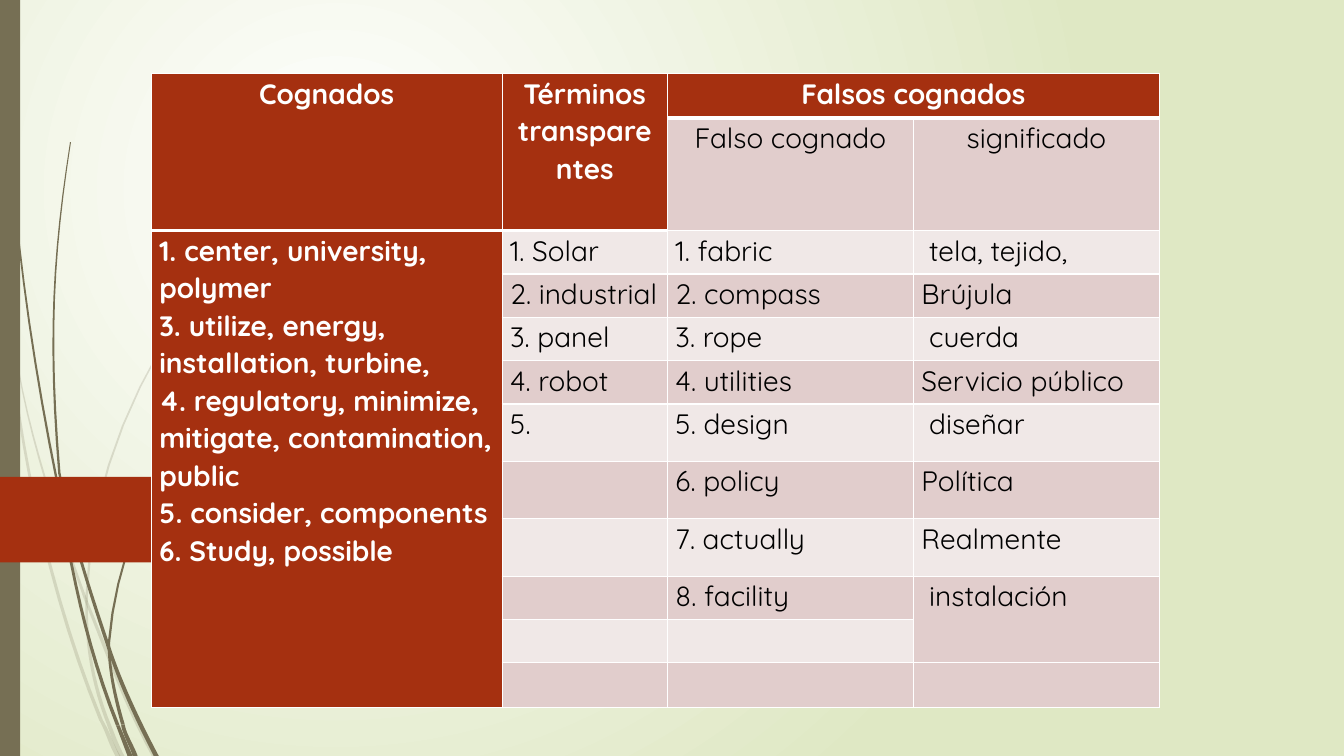
import pptx
import pptx.dml.color
import pptx.enum.shapes
import pptx.enum.text
import pptx.oxml
import pptx.oxml.ns
import pptx.util

Inches = pptx.util.Inches

HEADERS = [
    ("Cognados", "Términos transparentes", "Falsos cognados", ""),
    ("", "", "Falso cognado", "significado"),
]
COGNATES = "\n".join([
    "1. center, university, polymer",
    "3. utilize, energy, installation, turbine,",
    "4. regulatory, minimize, mitigate, contamination, public",
    "5. consider, components",
    "6. Study, possible",
])
TERMS = [
    (COGNATES, "1. Solar", "1. fabric", " tela, tejido,"),
    ("", "2. industrial", "2. compass", "Brújula"),
    ("", "3. panel", "3. rope", " cuerda"),
    ("", "4. robot", "4. utilities", "Servicio público"),
    ("", "5.", "5. design", " diseñar"),
    ("", "", "6. policy", "Política"),
    ("", "", "7. actually", "Realmente"),
    ("", "", "8. facility", " instalación"),
    ("", "", "", ""),
    ("", "", "", ""),
]
COLUMN_WIDTHS = [3.48, 1.64, 2.44, 2.44]
ROW_HEIGHTS = [0.44, 0.46] + [0.43] * 4 + [0.57] * 3 + [0.43, 0.43, 0.44]
# First and last (row, column) of each merged block
MERGES = [((0, 0), (1, 0)), ((0, 1), (1, 1)), ((0, 2), (0, 3)),
          ((2, 0), (11, 0)), ((9, 3), (10, 3))]

# Points each grass stem passes through, tip to root; every third one is a joint
PALE_STEMS = {
    "left": [(0, 2.9), (0.04, 3.1), (0.07, 3.3), (0.11, 3.5), (0.29, 4.7),
             (0.59, 5.95), (1, 7.14), (1.06, 7.26), (1.11, 7.38), (1.17, 7.5)],
    "middle": [(0.15, 3.45), (0.33, 4.33), (0.59, 5.2), (0.85, 5.95),
               (1.07, 6.5), (1.28, 7), (1.53, 7.5)],
    "right": [(3.12, 1.53), (2.04, 2.78), (1.22, 4.22), (0.86, 5.9), (0.87, 6.3),
              (0.93, 6.7), (1.05, 7.11), (1.1, 7.24), (1.15, 7.37), (1.21, 7.5)],
}
DARK_STEMS = {
    "left": [(0.04, 0), (0.11, 1.6), (0.29, 3.2), (0.57, 4.8), (0.71, 5.6),
             (0.9, 6.4), (1.17, 7.2), (1.21, 7.3), (1.25, 7.4), (1.29, 7.5)],
    "middle": [(0.7, 1.41), (0.57, 2.45), (0.53, 3.49), (0.59, 4.7), (0.73, 5.3),
               (0.9, 5.88), (1.08, 6.43), (1.21, 6.78), (1.37, 7.14), (1.55, 7.5)],
    "right": [(2.6, 3.44), (1.87, 4.3), (1.34, 5.26), (1.08, 6.38), (1.1, 6.65),
              (1.15, 6.92), (1.22, 7.19), (1.25, 7.29), (1.3, 7.4), (1.34, 7.5)],
}
TIP_WIDTH, ROOT_WIDTH = 0.01, 0.05
CURVE_STEPS = 12

THEME = {
    "white": "FFFFFF", "black": "000000", "meadow": "DFE8C4",
    "grass": "766F54", "brick": "A53010",
    "band": ("F0E8E7", "E1CDCC"),
    "font": "Quicksand", "size": 20, "pale_opacity": 20,
}


def rgb(code):
    return pptx.dml.color.RGBColor.from_string(code)


def paint(shape, color, opacity=100):
    shape.shadow.inherit = False
    shape.fill.solid()
    shape.fill.fore_color.rgb = rgb(color)
    shape.line.fill.background()
    if opacity < 100:
        color_xml = shape.element.spPr.find(".//" + pptx.oxml.ns.qn("a:srgbClr"))
        color_xml.append(pptx.oxml.parse_xml(
            f'<a:alpha {pptx.oxml.ns.nsdecls("a")} val="{opacity * 1000}"/>'))


def draw_outline(slide, points, color, opacity=100):
    corners = [(Inches(x), Inches(y)) for x, y in points]
    builder = slide.shapes.build_freeform(*corners[0])
    builder.add_line_segments(corners[1:], close=True)
    paint(builder.convert_to_shape(), color, opacity)


def curve_point(waypoints, t):
    """Point at t (0 to 1) on the cubic that meets the four waypoints at equal steps."""
    s = 3 * t
    weights = ((1 - s) * (2 - s) * (3 - s) / 6, s * (2 - s) * (3 - s) / 2,
               s * (s - 1) * (3 - s) / 2, s * (s - 1) * (s - 2) / 6)
    return tuple(sum(weight * point[axis] for weight, point in zip(weights, waypoints))
                 for axis in (0, 1))


def draw_stem(slide, waypoints, opacity):
    """Draw one blade between each pair of joints, widening from tip to root."""
    last = len(waypoints) - 1
    for joint in range(0, last, 3):
        left_side, right_side = [], []
        for step in range(CURVE_STEPS + 1):
            t = step / CURVE_STEPS
            x, y = curve_point(waypoints[joint:joint + 4], t)
            grown = (joint + 3 * t) / last
            half = (TIP_WIDTH + (ROOT_WIDTH - TIP_WIDTH) * grown) / 2
            left_side.append((x - half, y))
            right_side.append((x + half, y))
        draw_outline(slide, left_side + right_side[::-1], THEME["grass"], opacity)


def draw_page_marker(slide):
    top, bottom, shoulder, tip = 4.73, 5.58, 1.5, 1.91
    draw_outline(slide, [(0, top), (shoulder, top), (tip, (top + bottom) / 2),
                         (shoulder, bottom), (0, bottom)], THEME["brick"])


def set_background(slide):
    fill = slide.background.fill
    fill.gradient()
    for stop, color in zip(fill.gradient_stops, ("white", "meadow")):
        stop.color.rgb = rgb(THEME[color])
    gradient = slide.element.find(".//" + pptx.oxml.ns.qn("a:gradFill"))
    gradient.remove(gradient.find(pptx.oxml.ns.qn("a:lin")))
    gradient.append(pptx.oxml.parse_xml(
        f'<a:path {pptx.oxml.ns.nsdecls("a")} path="circle"><a:fillToRect '
        'l="50000" t="50000" r="100000" b="100000"/></a:path>'))


def set_borders(cell, row, column):
    """Rule every side in white, thicker under the header cells."""
    thick_top = (row, column >= 2) in ((1, True), (2, False))
    thick_bottom = row == 0 or (row == 1 and column < 2)
    widths = {"L": 1, "R": 1, "T": 3 if thick_top else 1, "B": 3 if thick_bottom else 1}
    properties = cell._tc.get_or_add_tcPr()
    for order, (side, points) in enumerate(widths.items()):
        properties.insert(order, pptx.oxml.parse_xml(
            f'<a:ln{side} {pptx.oxml.ns.nsdecls("a")} w="{points * 12700}"><a:solidFill>'
            f'<a:srgbClr val="{THEME["white"]}"/></a:solidFill></a:ln{side}>'))


def format_cell(cell, row, column, text):
    strong = row == 0 or column == 0 or (row == 1 and column == 1)
    margins = {"margin_left": Inches(0.08), "margin_right": Inches(0.08),
               "margin_top": 0, "margin_bottom": 0}
    for name, value in margins.items():
        setattr(cell, name, value)
    cell.fill.solid()
    cell.fill.fore_color.rgb = rgb(THEME["brick"] if strong else THEME["band"][row % 2])
    set_borders(cell, row, column)
    if not text:
        return
    cell.text = text
    align = pptx.enum.text.PP_ALIGN
    font_format = {"name": THEME["font"], "size": pptx.util.Pt(THEME["size"]), "bold": strong}
    for paragraph in cell.text_frame.paragraphs:
        paragraph.alignment = align.CENTER if row < len(HEADERS) else align.LEFT
        paragraph.line_spacing = 1.07
        for run in paragraph.runs:
            for name, value in font_format.items():
                setattr(run.font, name, value)
            run.font.color.rgb = rgb(THEME["white" if strong else "black"])


def add_vocabulary(slide):
    rows = HEADERS + TERMS
    vocabulary = slide.shapes.add_table(
        len(rows), len(COLUMN_WIDTHS), Inches(1.5), Inches(0.73),
        Inches(sum(COLUMN_WIDTHS)), Inches(sum(ROW_HEIGHTS))).table
    for column, width in zip(vocabulary.columns, COLUMN_WIDTHS):
        column.width = Inches(width)
    for row, height in zip(vocabulary.rows, ROW_HEIGHTS):
        row.height = Inches(height)
    for first, last in MERGES:
        vocabulary.cell(*first).merge(vocabulary.cell(*last))
    for r, texts in enumerate(rows):
        for c, text in enumerate(texts):
            format_cell(vocabulary.cell(r, c), r, c, text)


def main():
    deck = pptx.Presentation()
    deck.slide_width, deck.slide_height = Inches(13.33), Inches(7.5)
    slide = deck.slides.add_slide(deck.slide_layouts[6])
    set_background(slide)
    for stems, opacity in ((PALE_STEMS, THEME["pale_opacity"]), (DARK_STEMS, 100)):
        for waypoints in stems.values():
            draw_stem(slide, waypoints, opacity)
    edge = slide.shapes.add_shape(
        pptx.enum.shapes.MSO_SHAPE.RECTANGLE, 0, 0, Inches(0.2), deck.slide_height)
    paint(edge, THEME["grass"])
    draw_page_marker(slide)
    add_vocabulary(slide)
    deck.save("out.pptx")


if __name__ == "__main__":
    main()
